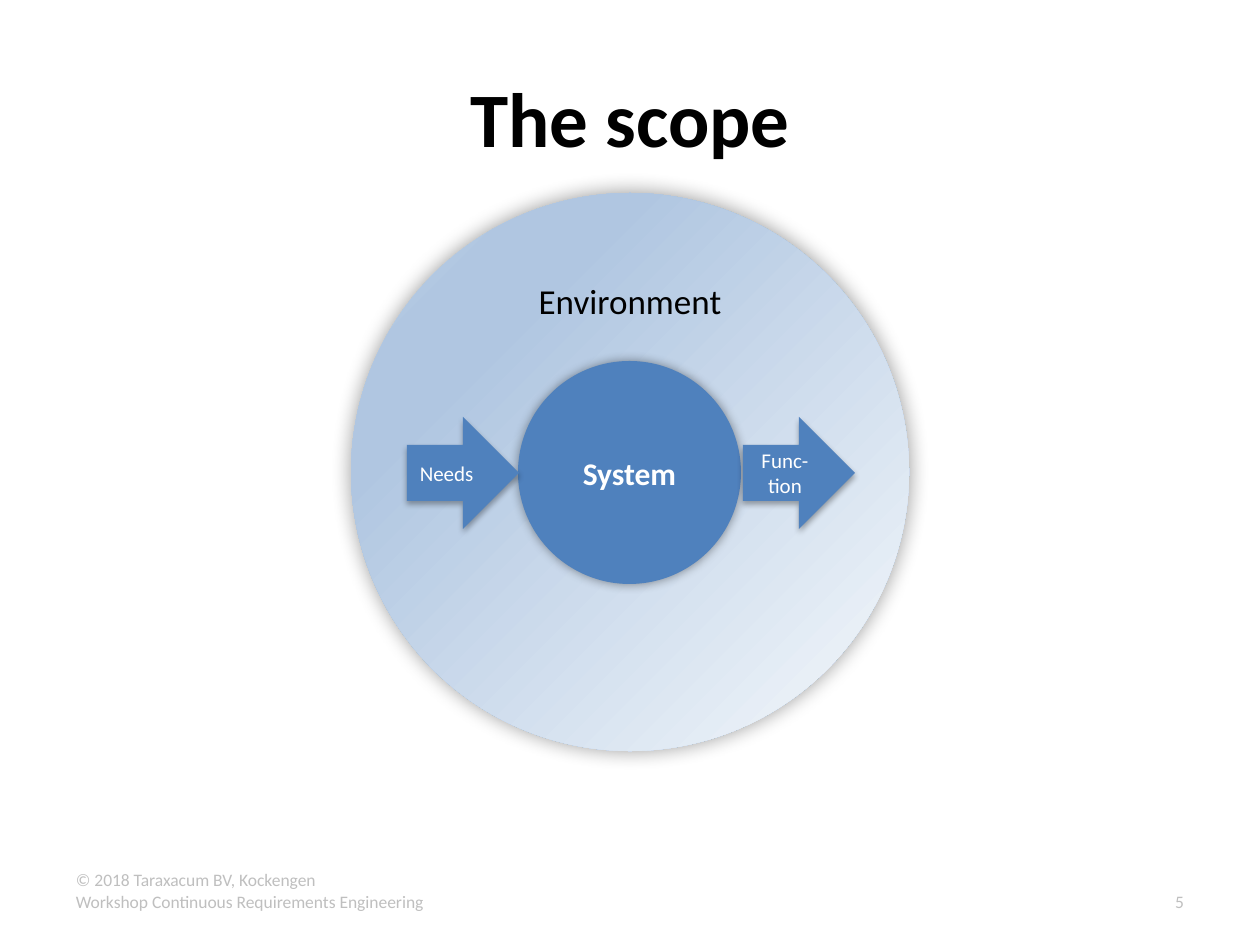
from pptx import Presentation
from pptx.dml.color import RGBColor
from pptx.enum.shapes import MSO_SHAPE
from pptx.enum.text import MSO_ANCHOR, PP_ALIGN
from pptx.oxml import parse_xml
from pptx.oxml.ns import nsdecls
from pptx.util import Pt

PX = 914400 / 126  # EMU per pixel
OVAL, ARROW = MSO_SHAPE.OVAL, MSO_SHAPE.RIGHT_ARROW
TOP, MID = MSO_ANCHOR.TOP, MSO_ANCHOR.MIDDLE
LEFT, MIDDLE, RIGHT = PP_ALIGN.LEFT, PP_ALIGN.CENTER, PP_ALIGN.RIGHT
BLACK = RGBColor(0x00, 0x00, 0x00)
WHITE = RGBColor(0xFF, 0xFF, 0xFF)
GRAY = RGBColor(0xBF, 0xBF, 0xBF)
BLUE = RGBColor(0x4F, 0x81, 0xBD)


def box(*px):
    return [round(n * PX) for n in px]


def write(shape, text, size, color, align, anchor, inset, bold=False):
    frame = shape.text_frame
    side, edge = box(*inset)
    look = {"word_wrap": True, "vertical_anchor": anchor,
            "margin_left": side, "margin_right": side,
            "margin_top": edge, "margin_bottom": edge}
    for key, value in look.items():
        setattr(frame, key, value)
    para = frame.paragraphs[0]
    para.alignment = align
    run = para.add_run()
    run.text = text
    for key, value in {"name": "Calibri", "size": Pt(size), "bold": bold}.items():
        setattr(run.font, key, value)
    run.font.color.rgb = color


deck = Presentation()
deck.slide_width, deck.slide_height = box(1260, 945)
slide = deck.slides.add_slide(deck.slide_layouts[5])
shapes = slide.shapes

# Title
title = shapes.title
title.left, title.top, title.width, title.height = box(63, 38, 1134, 157)
write(title, "The scope", 44, BLACK, MIDDLE, MID, (13, 6), True)

# Footer
for text, place, align, edge in [
    ("© 2018 Taraxacum BV, Kockengen", (63, 869, 290, 15), LEFT, 0),
    ("Workshop Continuous Requirements Engineering", (63, 885, 1008, 50), LEFT, 6),
    ("5", (1074, 885, 123, 50), RIGHT, 6),
]:
    note = shapes.add_textbox(*box(*place))
    write(note, text, 10, GRAY, align, TOP, (13, edge))

# Circles and arrows: kind, place, text, size, colour, anchor, side inset, bold, shadow
GLOW, SOFT, DROP = (40, 12, 0), (40, 6, 0), (32, 3.5, 2.2)
parts = {}
for kind, place, text, size, color, anchor, side, bold, shade in [
    (OVAL, (351, 193, 558, 558), "Environment", 20, BLACK, TOP, 9, False, GLOW),
    (OVAL, (518, 361, 223, 223), "System", 18, WHITE, MID, 0, True, SOFT),
    (ARROW, (743, 417, 112, 112), "Func-tion", 12, WHITE, MID, 9, False, DROP),
    (ARROW, (407, 417, 112, 112), "Needs ", 12, WHITE, MID, 9, False, DROP),
]:
    part = shapes.add_shape(kind, *box(*place))
    part.fill.solid()
    part.fill.fore_color.rgb = BLUE
    part.line.fill.background()
    part.shadow.inherit = False
    alpha, blur, dist = shade
    part._element.spPr.find("{*}effectLst").append(parse_xml(
        f'<a:outerShdw {nsdecls("a")} blurRad="{Pt(blur)}" dist="{Pt(dist)}" '
        f'dir="5400000" rotWithShape="0"><a:srgbClr val="000000">'
        f'<a:alpha val="{alpha * 1000}"/></a:srgbClr></a:outerShdw>'))
    write(part, text, size, color, MIDDLE, anchor, (side, 5), bold)
    parts[text] = part

# Radial gradient of the environment, centred at its lower right
stops = "".join(
    f'<a:gs pos="{pos * 1000}"><a:srgbClr val="{tint}"/></a:gs>'
    for pos, tint in [(0, "F6F9FC"), (74, "B0C6E1"), (83, "B0C6E1"), (100, "CAD9EB")])
props = parts["Environment"]._element.spPr
props.replace(props.find("{*}solidFill"), parse_xml(
    f'<a:gradFill {nsdecls("a")} rotWithShape="1"><a:gsLst>{stops}</a:gsLst>'
    '<a:path path="circle"><a:fillToRect l="100000" t="100000"/></a:path></a:gradFill>'))

deck.save("out.pptx")
